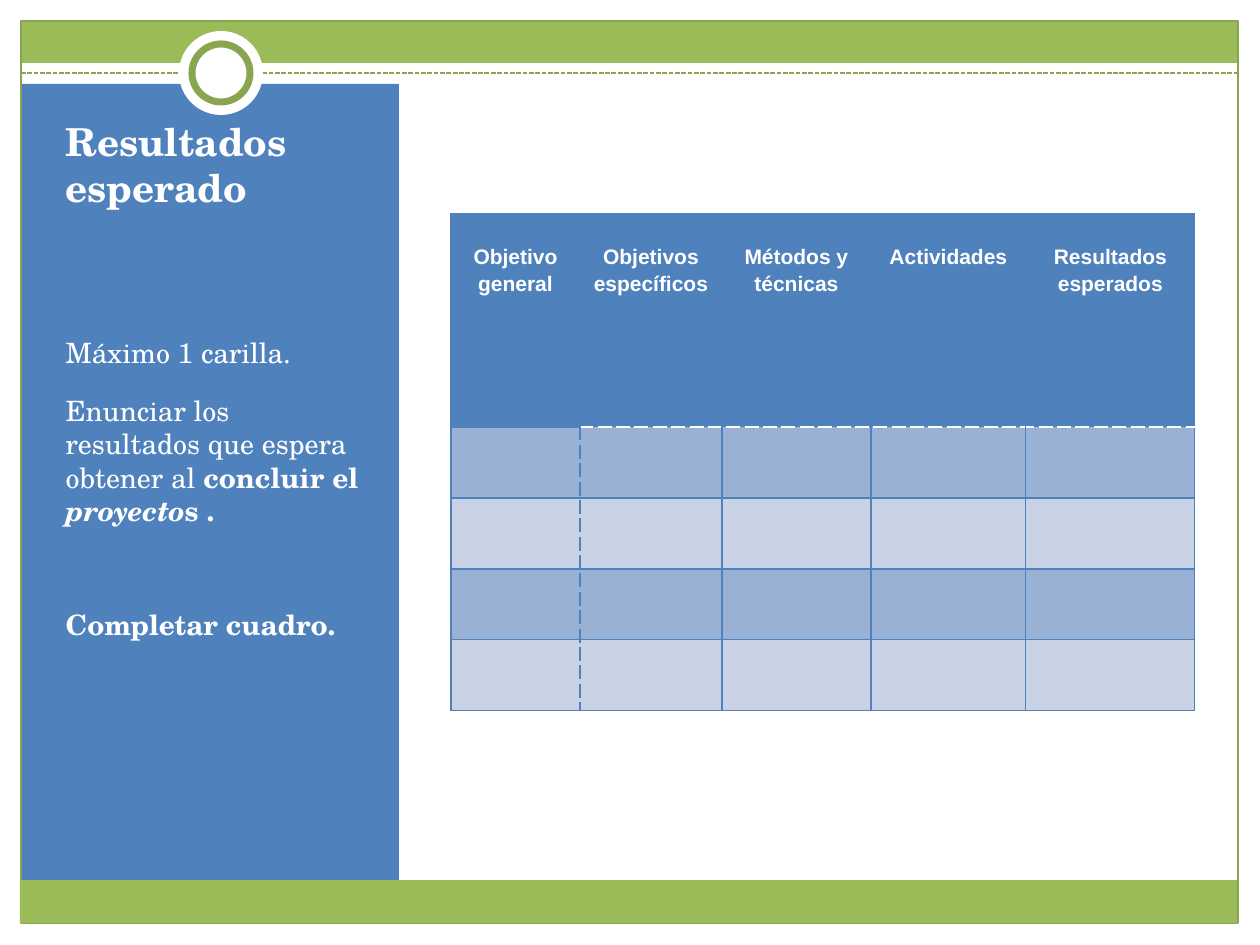
import pptx
import pptx.util
import pptx.dml.color
import pptx.enum.dml
import pptx.enum.shapes
import pptx.enum.text
import pptx.oxml
import pptx.oxml.ns
from lxml import etree

# Content
TITLE = "Resultados esperado"
# (space before in pt, space after in pt, [(text, bold, italic)])
NOTES = [
    (0, 10, [("Máximo 1 carilla.", False, False)]),
    (3.5, 10, [("Enunciar los resultados que espera obtener al ", False, False),
               ("concluir el ", True, False),
               ("proyecto", True, True),
               ("s .", True, False)]),
    (35.5, 10, [("Completar cuadro.", True, False)]),
]
HEADERS = ["Objetivo general", "Objetivos específicos", "Métodos y técnicas",
           "Actividades", "Resultados esperados"]
BODY_ROWS = 4

# Layout in px
SLIDE = (1260, 945)
TITLE_BOX = (53, 126, 325, 136)
BODY_BOX = (53, 273, 325, 571)
TABLE_AT = (451, 214)
COL_WIDTHS = [129, 142, 149, 155, 169]
HEADER_H, ROW_H = 213, 71
RULE = (21, 73, 1238, 73)

THEME = {
    "green": "9BBB59", "olive": "89A54F", "blue": "4F81BD", "white": "FFFFFF",
    "band_dark": "98B1D4", "band_light": "C9D1E5",
    "serif": "TeX Gyre Schola", "sans": "Arial",
    "title": 22, "body": 16, "header": 12,
    "thin": 0.75, "dash": 0.9, "ring": 4,
}

# (preset, box, fill, line, line width)
FRAME_PARTS = [
    ("RECTANGLE", (21, 21, 1217, 42), "green", None, None),
    ("RECTANGLE", (21, 84, 378, 809), "blue", None, None),
    ("RECTANGLE", (21, 21, 1217, 902), None, "olive", "thin"),
    ("RULE", RULE, None, "olive", "dash"),
    ("OVAL", (179, 31, 84, 84), "white", None, None),
    ("OVAL", (192, 44, 58, 58), "white", "olive", "ring"),
    ("RECTANGLE", (20, 880, 1217, 43), "green", None, None),
]


def px(n):
    return pptx.util.Emu(n * 914400 // 126)


def color(name):
    return pptx.dml.color.RGBColor.from_string(THEME[name])


def place(sp, box):
    sp.left, sp.top, sp.width, sp.height = map(px, box)


def set_font(font, face, size, bold=None):
    font.name, font.size = THEME[face], pptx.util.Pt(THEME[size])
    font.color.rgb = color("white")
    font.bold = bold


def add_part(slide, preset, box, fill, line, width):
    if preset == "RULE":
        sp = slide.shapes.add_connector(
            pptx.enum.shapes.MSO_CONNECTOR.STRAIGHT, *map(px, box))
        sp.line.dash_style = pptx.enum.dml.MSO_LINE.SQUARE_DOT
        etree.SubElement(sp._element.spPr, pptx.oxml.ns.qn("a:effectLst"))
    else:
        kind = getattr(pptx.enum.shapes.MSO_SHAPE, preset)
        sp = slide.shapes.add_shape(kind, *map(px, box))
        sp.shadow.inherit = False
        if fill:
            sp.fill.solid()
            sp.fill.fore_color.rgb = color(fill)
        else:
            sp.fill.background()
    if line:
        sp.line.color.rgb = color(line)
        sp.line.width = pptx.util.Pt(THEME[width])
    else:
        sp.line.fill.background()


def set_borders(cell, **sides):
    """Each side is (colour, dashed) or None for no line."""
    tc_pr = cell._tc.get_or_add_tcPr()
    for side in "LRTB":
        spec_ = sides[side]
        ln = etree.SubElement(tc_pr, pptx.oxml.ns.qn("a:ln" + side))
        if spec_ is None:
            etree.SubElement(ln, pptx.oxml.ns.qn("a:noFill"))
            continue
        name, dashed = spec_
        ln.set("w", str(pptx.util.Pt(THEME["dash" if dashed else "thin"])))
        fill = etree.SubElement(ln, pptx.oxml.ns.qn("a:solidFill"))
        etree.SubElement(fill, pptx.oxml.ns.qn("a:srgbClr"), val=THEME[name])
        etree.SubElement(ln, pptx.oxml.ns.qn("a:prstDash"),
                         val="sysDash" if dashed else "solid")


def add_table(slide):
    n_cols, n_rows = len(HEADERS), BODY_ROWS + 1
    size = (sum(COL_WIDTHS), HEADER_H + BODY_ROWS * ROW_H)
    frame = slide.shapes.add_table(n_rows, n_cols, *map(px, TABLE_AT + size))
    table = frame.table
    # "No style, no grid": every fill and border is set per cell
    style = table._tbl.tblPr.find(pptx.oxml.ns.qn("a:tableStyleId"))
    style.text = "{2D5ABB26-0587-4C30-8999-92F81FD0307C}"
    for col, width in zip(table.columns, COL_WIDTHS):
        col.width = px(width)
    solid, dashed, white = ("blue", False), ("blue", True), ("white", True)

    for r in range(n_rows):
        table.rows[r].height = px(ROW_H if r else HEADER_H)
        for c in range(n_cols):
            cell = table.cell(r, c)
            if r == 0:
                fill = "blue"
                set_borders(cell, L=None if c else solid,
                            R=solid if c == n_cols - 1 else None,
                            T=solid, B=white if c else solid)
                fill_header(cell, HEADERS[c])
            else:
                fill = "band_dark" if r % 2 else "band_light"
                set_borders(cell, L=dashed if c == 1 else solid,
                            R=solid if c else dashed,
                            T=white if r == 1 and c else solid, B=solid)
            cell.fill.solid()
            cell.fill.fore_color.rgb = color(fill)


def fill_header(cell, text):
    cell.margin_left = cell.margin_right = px(9)
    cell.margin_top, cell.margin_bottom = px(28), 0
    p = cell.text_frame.paragraphs[0]
    p.text = text
    p.alignment = pptx.enum.text.PP_ALIGN.CENTER
    p.line_spacing = 1.15
    set_font(p.font, "sans", "header", True)


def fill_title(sp):
    place(sp, TITLE_BOX)
    tf = sp.text_frame
    tf.auto_size = pptx.enum.text.MSO_AUTO_SIZE.NONE
    tf.vertical_anchor = pptx.enum.text.MSO_ANCHOR.BOTTOM
    tf.margin_bottom = px(52)
    p = tf.paragraphs[0]
    p.text = TITLE
    p.alignment = pptx.enum.text.PP_ALIGN.LEFT
    set_font(p.font, "serif", "title", True)


def fill_notes(sp):
    place(sp, BODY_BOX)
    tf = sp.text_frame
    tf.auto_size = pptx.enum.text.MSO_AUTO_SIZE.NONE
    tf.margin_top = px(63)
    for i, (before, after, runs) in enumerate(NOTES):
        p = tf.add_paragraph() if i else tf.paragraphs[0]
        p.space_before, p.space_after = pptx.util.Pt(before), pptx.util.Pt(after)
        set_font(p.font, "serif", "body")
        for text, bold, italic in runs:
            r = p.add_run()
            r.text, r.font.bold, r.font.italic = text, bold, italic


def main():
    prs = pptx.Presentation()
    prs.slide_width, prs.slide_height = map(px, SLIDE)
    slide = prs.slides.add_slide(prs.slide_layouts[7])
    title, content, notes = slide.placeholders
    content._element.getparent().remove(content._element)

    # Frame and side panel, then the text in front of them
    for part in FRAME_PARTS:
        add_part(slide, *part)
    for sp in (title, notes):
        slide.shapes._spTree.append(sp._element)
    fill_title(title)
    fill_notes(notes)
    add_table(slide)
    prs.save("out.pptx")


if __name__ == "__main__":
    main()
